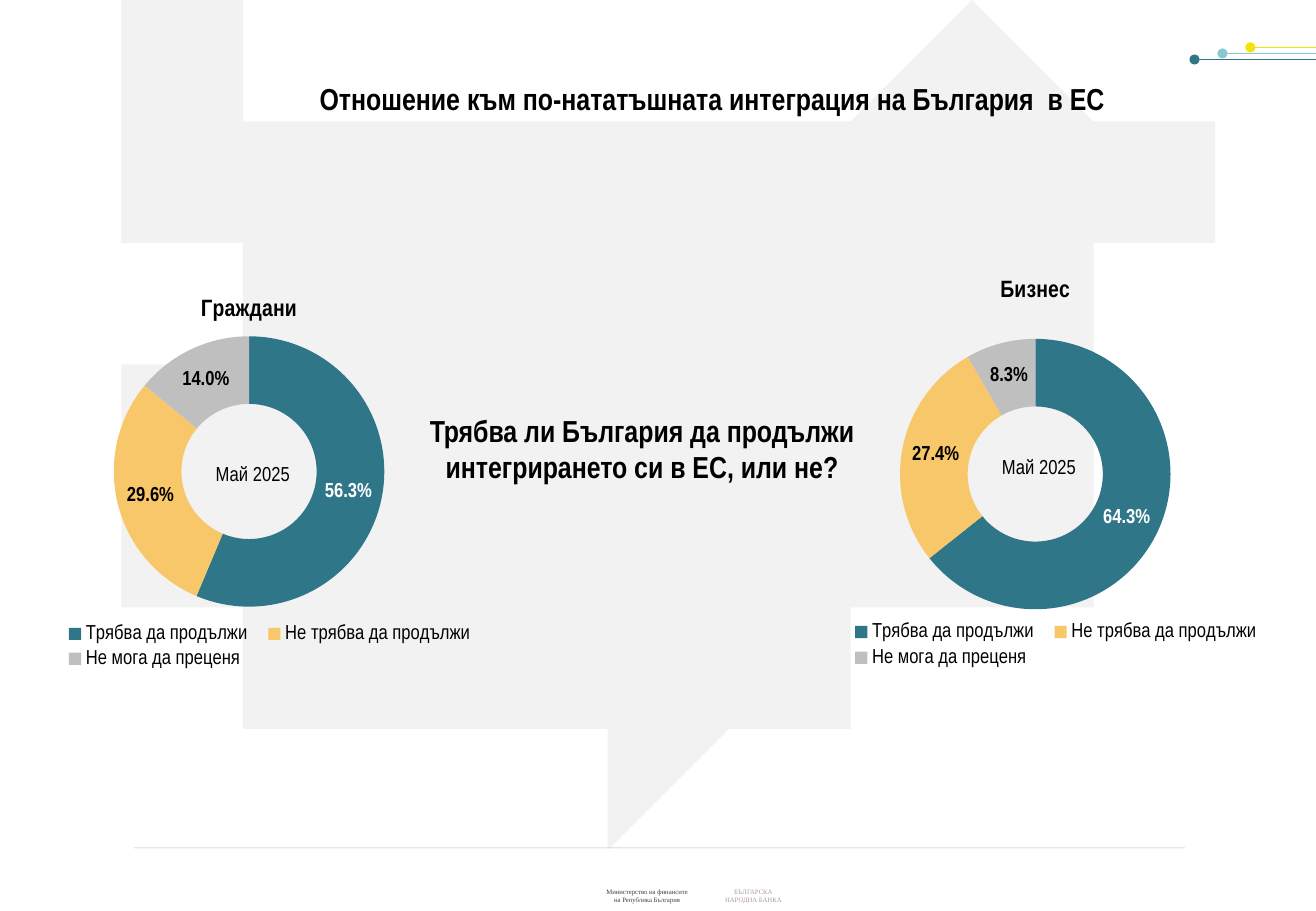
import pptx
import pptx.chart.data
import pptx.dml.color
import pptx.enum.chart
import pptx.enum.shapes
import pptx.enum.text
import pptx.oxml
import pptx.oxml.ns
import pptx.util
from lxml import etree

Inches = pptx.util.Inches
Pt = pptx.util.Pt
qn = pptx.oxml.ns.qn
ALIGN = pptx.enum.text.PP_ALIGN

COLORS = {
    "teal": "307689", "sky": "8AC7D3", "yellow": "F2E404", "amber": "F7C76A",
    "silver": "BFBFBF", "map": "F2F2F2", "rule": "A6A6A6", "black": "000000",
    "white": "FFFFFF", "ministry": "404040", "bank": "AF9A9A",
}
SANS, SERIF = "Arial Narrow", "Times New Roman"
ANSWERS = ["Трябва да продължи", "Не трябва да продължи", "Не мога да преценя"]
ANSWER_COLORS = ["teal", "amber", "silver"]

# Country outline, clockwise from the north-west, in inches
OUTLINE = [
    (1.24, .26), (1.4, .2), (1.55, .27), (1.7, .46), (1.85, .56), (1.7, .7),
    (1.63, .9), (1.7, 1.12), (1.9, 1.1), (2.3, .94), (2.8, .95), (3.7, 1.2),
    (4.5, 1.14), (5.4, 1.39), (5.9, 1.37), (6.4, .92), (6.9, .56), (7.6, .43),
    (7.95, .31), (8.24, .34), (8.6, .59), (9.05, .76), (9.3, .7), (9.5, 1.06),
    (10, 1.23), (10.3, 1.28), (10.26, 1.8), (10.12, 2), (9.75, 1.93),
    (9.4, 2.32), (9.22, 2.46), (9.2, 3.4), (9, 3.5), (8.6, 3.93), (8.9, 4.1),
    (9.15, 4.62), (9.42, 4.95), (8.7, 5.14), (8.3, 4.8), (7.75, 4.88),
    (7.23, 5.03), (7.17, 5.25), (6.83, 5.55), (6.5, 5.53), (6.45, 5.68),
    (6.55, 5.8), (6.62, 6.1), (6.45, 6.35), (5.7, 6.38), (5.3, 6.54),
    (5, 6.3), (4.5, 6.25), (4.2, 6.1), (4.04, 5.93), (3.64, 5.87),
    (3.26, 6), (3.2, 6.1), (2.39, 6.21), (2.05, 6.32), (1.9, 6.43),
    (1.72, 6.37), (1.69, 5.7), (1.79, 5.6), (1.6, 4.98), (1.1, 4.6), (.84, 4.21),
    (1.04, 4.18), (1.08, 3.85), (1, 3.5), (1, 3.17), (1.3, 3.17), (1.7, 2.75),
    (1.73, 2.37), (1.4, 2), (1.07, 1.79), (.83, 1.05), (.94, .69), (1.23, .5),
]


def rgb(name):
    return pptx.dml.color.RGBColor.from_string(COLORS[name])


def set_font(font, size, color="black", bold=False, name=SANS):
    font.size, font.bold, font.name = Pt(size), bold, name
    font.color.rgb = rgb(color)


def write(tf, text, align=ALIGN.CENTER, wrap=True, **fmt):
    tf.word_wrap = wrap
    tf.auto_size = pptx.enum.text.MSO_AUTO_SIZE.NONE
    tf.vertical_anchor = pptx.enum.text.MSO_ANCHOR.TOP
    p = tf.paragraphs[0]
    p.alignment = align
    r = p.add_run()
    r.text = text
    set_font(r.font, **fmt)


def add_text(slide, box, text, **fmt):
    sp = slide.shapes.add_textbox(*map(Inches, box))
    write(sp.text_frame, text, **fmt)


def add_rule(slide, x1, x2, y, color, dot=False, alpha=None):
    line = slide.shapes.add_connector(
        pptx.enum.shapes.MSO_CONNECTOR.STRAIGHT, *map(Inches, (x1, y, x2, y)))
    line.line.width = Pt(0.25)
    line.line.color.rgb = rgb(color)
    ln = line.element.find(".//" + qn("a:ln"))
    if dot:
        etree.SubElement(ln, qn("a:headEnd"), type="oval")
    if alpha:
        etree.SubElement(ln.find(".//" + qn("a:srgbClr")), qn("a:alpha"), val=str(alpha * 1000))
    etree.SubElement(line.element.spPr, qn("a:effectLst"))


def draw_map(slide, x, y):
    builder = slide.shapes.build_freeform(*OUTLINE[0], scale=Inches(1))
    builder.add_line_segments(OUTLINE[1:], close=True)
    sp = builder.convert_to_shape(Inches(x), Inches(y))
    sp.shadow.inherit = False
    sp.fill.solid()
    sp.fill.fore_color.rgb = rgb("map")
    sp.line.fill.background()


def draw_corner_lines(slide, x, y, right):
    for i, color in enumerate(("teal", "sky", "yellow")):
        add_rule(slide, x + i * 0.23, right, y - i * 0.05, color, dot=True)


def draw_footer(slide, x, y, w):
    add_rule(slide, x, x + w, y, "rule", alpha=74)
    add_text(slide, (x + 3.77, y + 0.28, 0.91, 0.24),
             "Министерство на финансите на Република България",
             size=4, color="ministry", name=SERIF)
    add_text(slide, (x + 4.75, y + 0.28, 0.7, 0.24), "БЪЛГАРСКА НАРОДНА БАНКА",
             size=4, color="bank", name=SERIF)


def set_layout(parent, box, inner=False):
    """Place a chart part by fractions of the chart area."""
    for old in parent.findall(qn("c:layout")):
        parent.remove(old)
    layout = etree.Element(qn("c:layout"))
    manual = etree.SubElement(layout, qn("c:manualLayout"))
    if inner:
        etree.SubElement(manual, qn("c:layoutTarget"), val="inner")
    for tag in ("xMode", "yMode"):
        etree.SubElement(manual, qn("c:" + tag), val="edge")
    for tag, value in zip("xywh", box):
        etree.SubElement(manual, qn("c:" + tag), val=str(value))
    parent.insert(0 if inner else 1, layout)


def draw_survey(slide, box, group, values, plot_box, date_y):
    x, y = box[:2]
    data = pptx.chart.data.CategoryChartData(number_format="0.0%")
    data.categories = ANSWERS
    data.add_series(group, values)
    chart = slide.shapes.add_chart(
        pptx.enum.chart.XL_CHART_TYPE.DOUGHNUT, *map(Inches, box), data).chart
    set_font(chart.font, 10)

    # Title and legend
    chart.has_title = True
    r = chart.chart_title.text_frame.paragraphs[0].add_run()
    r.text = group
    set_font(r.font, 14, bold=True)
    chart.has_legend = True
    chart.legend.position = pptx.enum.chart.XL_LEGEND_POSITION.BOTTOM
    chart.legend.include_in_layout = False
    set_font(chart.legend.font, 12)
    plot_area = chart.element.find(".//" + qn("c:plotArea"))
    set_layout(plot_area, plot_box, inner=True)
    set_layout(chart.element.find(".//" + qn("c:legend")), (0.17, 0.86, 0.73, 0.14))

    # Ring and labels
    plot = chart.plots[0]
    plot.vary_by_categories = True
    series = plot.series[0]
    for i, color in enumerate(ANSWER_COLORS):
        fmt = series.points[i].format
        fmt.fill.solid()
        fmt.fill.fore_color.rgb = rgb(color)
        fmt.line.fill.background()
    labels = series.data_labels
    labels.show_value = True
    labels.number_format = "0.0%"
    labels.number_format_is_linked = False
    set_font(labels.font, 12, bold=True)
    set_font(series.points[0].data_label.font, 12, "white", bold=True)

    add_text(slide, (x + 1.94, y + date_y, 1.02, 0.35), "Май 2025", size=12)


def draw_title(slide, box, text):
    title = slide.shapes.title
    title.left, title.top, title.width, title.height = map(Inches, box)
    write(title.text_frame, text, align=ALIGN.LEFT, wrap=False, size=18, bold=True)
    title.element.getparent().append(title.element)  # in front of the map


def main():
    prs = pptx.Presentation()
    prs.slide_width, prs.slide_height = Inches(10.83), Inches(7.5)
    slide = prs.slides.add_slide(prs.slide_layouts[5])
    draw_corner_lines(slide, 9.83, 0.49, 10.83)
    draw_map(slide, 0, 0)
    draw_footer(slide, 1.1, 6.98, 8.65)
    add_text(slide, (3.41, 3.34, 3.75, 0.71),
             "Трябва ли България да продължи интегрирането си в ЕС, или не?",
             size=18, bold=True)
    draw_survey(slide, (6.1, 2.12, 4.84, 3.43), "Бизнес", (0.643, 0.274, 0.083),
                (0.27, 0.13, 0.46, 0.78), 1.57)
    draw_survey(slide, (-0.37, 2.28, 4.84, 3.27), "Граждани", (0.563, 0.296, 0.14),
                (0.27, 0.1, 0.46, 0.78), 1.47)
    draw_title(slide, (2.53, 0.61, 6.74, 0.4),
               "Отношение към по-нататъшната интеграция на България  в ЕС")
    prs.save("out.pptx")


if __name__ == "__main__":
    main()
